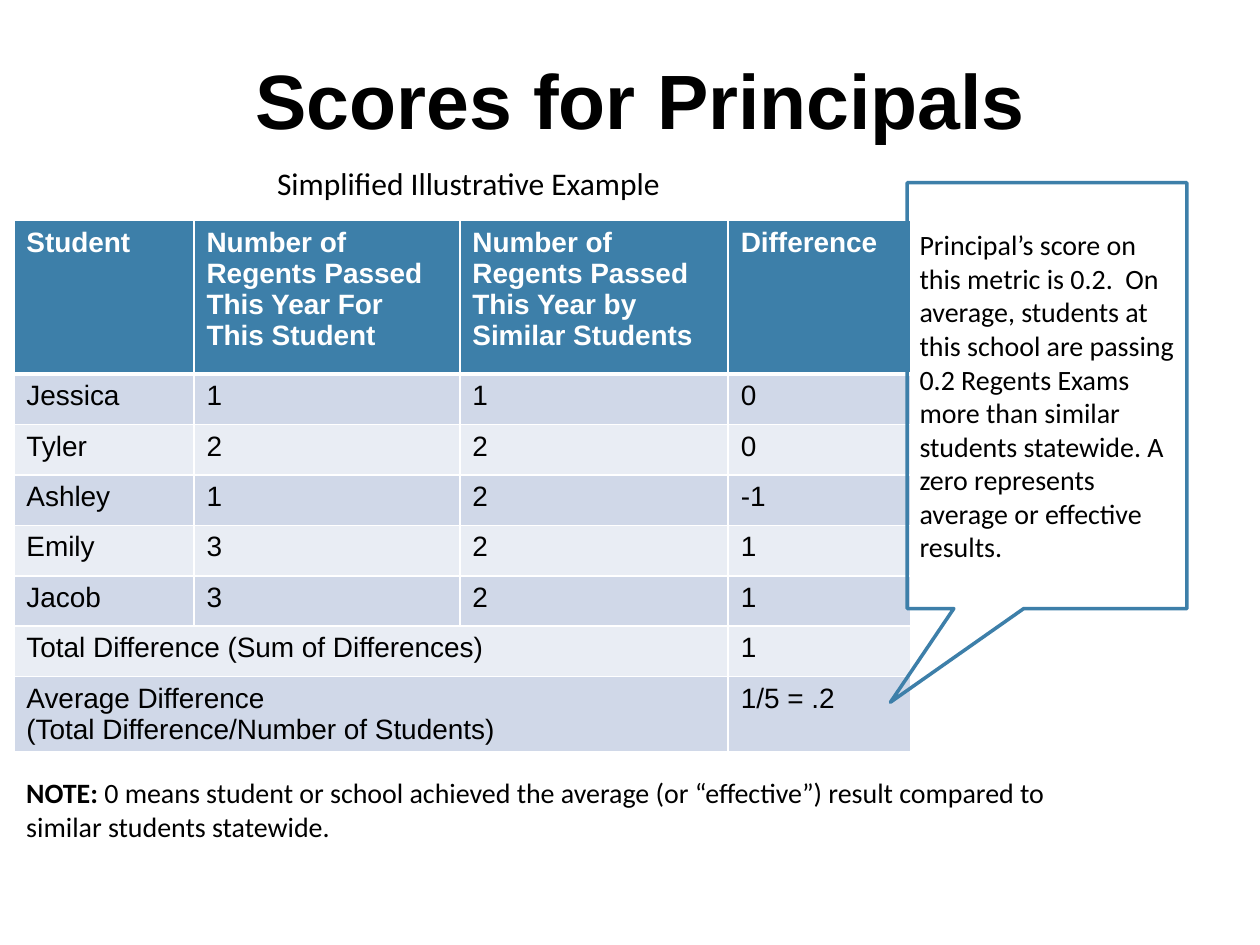
from lxml import etree
from pptx import Presentation
from pptx.dml.color import RGBColor
from pptx.enum.shapes import MSO_SHAPE
from pptx.enum.text import MSO_ANCHOR, MSO_AUTO_SIZE, PP_ALIGN
from pptx.oxml.ns import qn
from pptx.util import Inches, Pt

CALLOUT = MSO_SHAPE.RECTANGULAR_CALLOUT
TOP, MIDDLE, BOTTOM = MSO_ANCHOR.TOP, MSO_ANCHOR.MIDDLE, MSO_ANCHOR.BOTTOM
LEFT, CENTER = PP_ALIGN.LEFT, PP_ALIGN.CENTER
FIT_SHAPE, NO_FIT = MSO_AUTO_SIZE.SHAPE_TO_FIT_TEXT, MSO_AUTO_SIZE.NONE

BLACK, WHITE, BLUE = "000000", "FFFFFF", "3D7FA9"
BANDS = ["E9EDF4", "D0D8E8"]

TITLE = "Scores for Principals"
SUBTITLE = "Simplified Illustrative Example"
HEADER = [
    "Student",
    "Number of Regents Passed This Year For This Student",
    "Number of Regents Passed This Year by Similar Students",
    "Difference",
]
STUDENTS = [
    ("Jessica", "1", "1", "0"),
    ("Tyler", "2", "2", "0"),
    ("Ashley", "1", "2", "-1"),
    ("Emily", "3", "2", "1"),
    ("Jacob", "3", "2", "1"),
]
SUMMARY = [
    ("Total Difference (Sum of Differences)", "", "", "1"),
    ("Average Difference \n(Total Difference/Number of Students)", "", "", "1/5 = .2"),
]
SCORE = (
    "Principal’s score on this metric is 0.2.  On average, students at this school "
    "are passing 0.2 Regents Exams more than similar students statewide. "
    "A zero represents average or effective results."
)
NOTE = [
    ("NOTE: ", True),
    ("0 means student or school achieved the average (or “effective”) result "
     "compared to similar students statewide.", False),
]
COLUMN_WIDTHS = [1.43, 2.11, 2.13, 1.45]
ROW_HEIGHTS = [1.22] + [0.4] * 6 + [0.6]


def rgb(color):
    return RGBColor.from_string(color)


def box(left, top, width, height):
    return [Inches(v) for v in (left, top, width, height)]


def add_run(paragraph, text, size, font, color=BLACK, bold=False):
    run = paragraph.add_run()
    run.text = text
    run.font.size = Pt(size)
    run.font.name = font
    run.font.bold = bold
    run.font.color.rgb = rgb(color)


def set_borders(cell, widths):
    """Draw white borders; widths in points for left, right, top, bottom."""
    properties = cell._tc.get_or_add_tcPr()
    for side, width in zip("LRTB", widths):
        line = etree.SubElement(properties, qn(f"a:ln{side}"), w=str(Pt(width)))
        fill = etree.SubElement(line, qn("a:solidFill"))
        etree.SubElement(fill, qn("a:srgbClr"), val=WHITE)


def add_title(slide):
    title = slide.shapes.title
    title.left, title.top, title.width, title.height = box(0.87, 0.27, 8.43, 0.93)
    frame = title.text_frame
    frame.vertical_anchor = BOTTOM
    frame.auto_size = NO_FIT
    paragraph = frame.paragraphs[0]
    paragraph.alignment = CENTER
    paragraph.line_spacing = Pt(36)
    add_run(paragraph, TITLE, 44, "Arial", bold=True)


def add_results_table(slide):
    rows = [HEADER] + STUDENTS + SUMMARY
    place = box(0.11, 1.75, sum(COLUMN_WIDTHS), sum(ROW_HEIGHTS))
    table = slide.shapes.add_table(len(rows), len(HEADER), *place).table
    for column, width in zip(table.columns, COLUMN_WIDTHS):
        column.width = Inches(width)
    for row, height in zip(table.rows, ROW_HEIGHTS):
        row.height = Inches(height)

    for r, texts in enumerate(rows):
        is_header = r == 0
        for c, text in enumerate(texts):
            cell = table.cell(r, c)
            set_borders(cell, (1, 1, 3 if r == 1 else 1, 3 if is_header else 1))
            cell.fill.solid()
            cell.fill.fore_color.rgb = rgb(BLUE if is_header else BANDS[r % 2])
            if not text:
                continue
            paragraph = cell.text_frame.paragraphs[0]
            for i, line in enumerate(text.split("\n")):
                if i:
                    paragraph.add_line_break()
                add_run(paragraph, line, 16, "Arial",
                        WHITE if is_header else BLACK, is_header)
        if r > len(STUDENTS):
            table.cell(r, 0).merge(table.cell(r, 2))


def add_callout(slide):
    callout = slide.shapes.add_shape(CALLOUT, *box(7.2, 1.45, 2.22, 3.38))
    callout.adjustments[0] = -0.56
    callout.adjustments[1] = 0.72
    callout.shadow.inherit = False
    callout.fill.background()
    callout.line.color.rgb = rgb(BLUE)
    callout.line.width = Pt(2)
    frame = callout.text_frame
    frame.word_wrap = True
    frame.vertical_anchor = MIDDLE
    paragraph = frame.paragraphs[0]
    paragraph.alignment = LEFT
    add_run(paragraph, SCORE, 16, "Calibri")


def add_text(slide, place, runs, size, wrap):
    frame = slide.shapes.add_textbox(*box(*place)).text_frame
    frame.word_wrap = wrap
    frame.auto_size = FIT_SHAPE
    frame.vertical_anchor = TOP
    for text, bold in runs:
        add_run(frame.paragraphs[0], text, size, "Calibri", bold=bold)


def main():
    deck = Presentation()
    deck.slide_width, deck.slide_height = Inches(10), Inches(7.5)
    slide = deck.slides.add_slide(deck.slide_layouts.get_by_name("Title Only"))
    add_title(slide)
    add_results_table(slide)
    add_callout(slide)
    add_text(slide, (2.1, 1.25, 3.55, 0.4), [(SUBTITLE, False)], 18, wrap=False)
    add_text(slide, (0.11, 6.11, 8.92, 0.64), NOTE, 16, wrap=True)
    deck.save("out.pptx")


if __name__ == "__main__":
    main()
